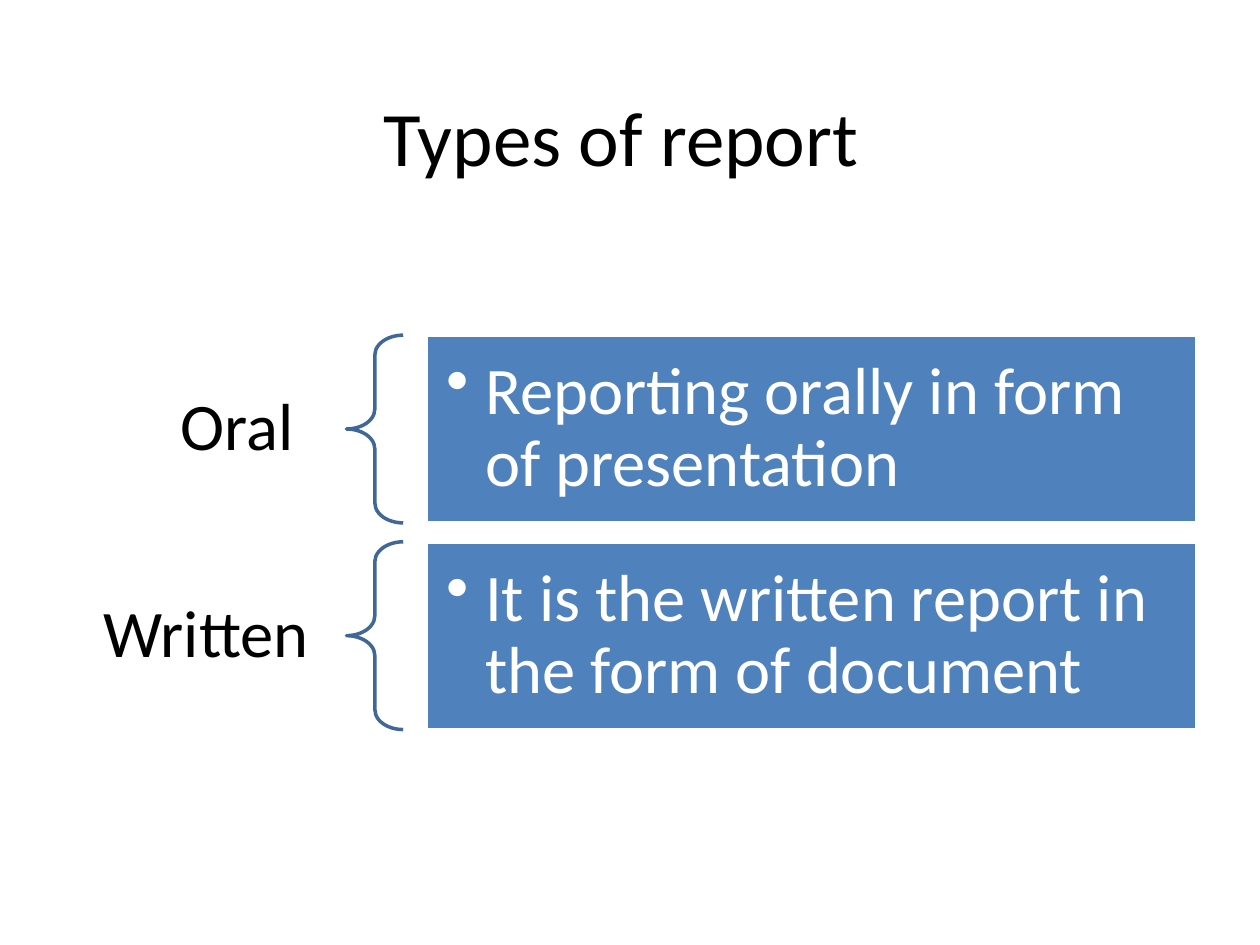
from lxml.etree import SubElement
from pptx import Presentation
from pptx.dml.color import RGBColor
from pptx.enum.shapes import MSO_SHAPE as SHAPE
from pptx.enum.text import MSO_ANCHOR as ANCHOR, PP_ALIGN as ALIGN
from pptx.oxml.ns import qn
from pptx.util import Inches, Pt

COLORS = {"text": "000000", "panel": "4F81BD", "brace": "3F6797", "white": "FFFFFF"}

# Columns and rows in inches
MARGIN, LABEL_W = 0.5, 2.25
BRACE_X, BRACE_W = MARGIN + LABEL_W, 0.45
PANEL_X, PANEL_W = 3.38, 6.12
ROW_TOP, ROW_H, ROW_STEP = 2.66, 1.49, 1.64
LABEL_H = 0.82

REPORT_TYPES = [
    ("Oral ", "Reporting orally in form of presentation"),
    ("Written ", "It is the written report in the form of document"),
]


def write(shape, text, size, color, align, inset, spacing=1.0, bullet=False):
    """Fill a shape with one vertically centred paragraph."""
    frame = shape.text_frame
    frame.text = text
    frame.word_wrap = True
    frame.vertical_anchor = ANCHOR.MIDDLE
    frame.margin_left = frame.margin_right = Inches(inset[0])
    frame.margin_top = frame.margin_bottom = Inches(inset[1])
    paragraph = frame.paragraphs[0]
    paragraph.alignment = align
    paragraph.line_spacing = spacing
    if bullet:
        properties = paragraph._p.get_or_add_pPr()
        properties.set("marL", str(Inches(0.31)))
        properties.set("indent", str(-Inches(0.31)))
        SubElement(properties, qn("a:buChar")).set("char", "•")
    font = paragraph.runs[0].font
    font.name = "Calibri"
    font.size = Pt(size)
    font.color.rgb = RGBColor.from_string(COLORS[color])


prs = Presentation()
prs.slide_width, prs.slide_height = Inches(10), Inches(7.5)
slide = prs.slides.add_slide(prs.slide_layouts[6])
shapes = slide.shapes

title = shapes.add_textbox(Inches(MARGIN), Inches(0.3), Inches(9), Inches(1.56))
write(title, "Types of report ", 44, "text", ALIGN.CENTER, (0.1, 0.05))

for row, (name, description) in enumerate(REPORT_TYPES):
    top = ROW_TOP + row * ROW_STEP

    label = shapes.add_textbox(Inches(MARGIN), Inches(top + (ROW_H - LABEL_H) / 2),
                               Inches(LABEL_W), Inches(LABEL_H))
    write(label, name, 38, "text", ALIGN.RIGHT, (0.3, 0.11), 0.9)

    brace = shapes.add_shape(SHAPE.LEFT_BRACE, Inches(BRACE_X), Inches(top),
                             Inches(BRACE_W), Inches(ROW_H))
    brace.adjustments[0] = 0.35
    brace.adjustments[1] = 0.5
    brace.fill.background()

    panel = shapes.add_shape(SHAPE.RECTANGLE, Inches(PANEL_X), Inches(top),
                             Inches(PANEL_W), Inches(ROW_H))
    panel.fill.solid()
    panel.fill.fore_color.rgb = RGBColor.from_string(COLORS["panel"])
    write(panel, description, 38, "white", ALIGN.LEFT, (0.16, 0.16), 0.9, bullet=True)

    for outlined, color in ((brace, "brace"), (panel, "white")):
        outlined.shadow.inherit = False
        outlined.line.width = Pt(2)
        outlined.line.color.rgb = RGBColor.from_string(COLORS[color])

prs.save("out.pptx")
